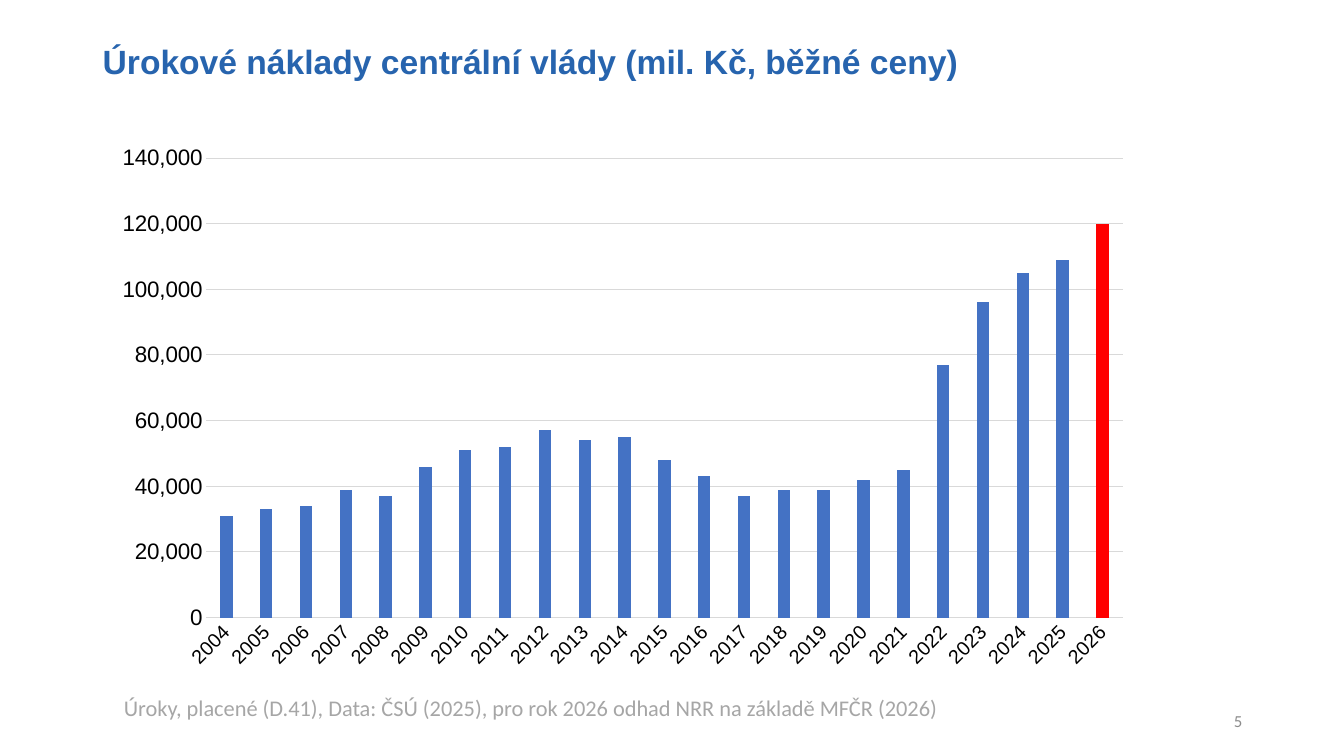
from dataclasses import dataclass

from pptx import Presentation
from pptx import util as u
from pptx.chart import data as cd
from pptx.dml import color as dc
from pptx.enum import chart as ch, text as tx

WIDE, HIGH = u.Inches(13.33), u.Inches(7.5)
HUES = {"title": "2764AE", "note": "A6A6A6", "page": "8C8C8C", "bar": "4472C4",
        "guess": "FF0000", "grid": "D9D9D9", "ink": "000000"}
YEARS = range(2004, 2027)
COSTS = [31, 33, 34, 39, 37, 46, 51, 52, 57, 54, 55, 48,
         43, 37, 39, 39, 42, 45, 77, 96, 105, 109, 120]


@dataclass
class Box:
    """A frame in percent of the slide's width and height."""
    left: float
    top: float
    wide: float
    high: float

    def frame(self) -> list[int]:
        return [round(part * side / 100) for part, side in
                zip((self.left, self.top, self.wide, self.high), (WIDE, HIGH) * 2)]


def hue(name: str) -> dc.RGBColor:
    return dc.RGBColor.from_string(HUES[name])


def style(font, size: float, tone: str, face: str, bold: bool = False) -> None:
    font.size, font.name, font.bold = u.Pt(size), face, bold
    font.color.rgb = hue(tone)


def write(slide, box: Box, words: str, *, size: float, tone: str, face: str = "Calibri",
          bold: bool = False, align=tx.PP_ALIGN.LEFT, anchor=tx.MSO_ANCHOR.TOP,
          space: float = 1.0) -> None:
    frame = slide.shapes.add_textbox(*box.frame()).text_frame
    frame.word_wrap, frame.vertical_anchor = True, anchor
    para = frame.paragraphs[0]
    para.alignment, para.line_spacing = align, space
    run = para.add_run()
    run.text = words
    style(run.font, size, tone, face, bold)


def rule(line) -> None:
    line.color.rgb, line.width = hue("grid"), u.Pt(0.75)


def plot(slide, box: Box) -> None:
    data = cd.CategoryChartData(number_format="#,##0")
    data.categories = [str(year) for year in YEARS]
    data.add_series("Series 1", [cost * 1000 for cost in COSTS])
    chart = slide.shapes.add_chart(
        ch.XL_CHART_TYPE.COLUMN_CLUSTERED, *box.frame(), data).chart
    chart.has_legend = chart.has_title = False
    style(chart.font, 10, "ink", "Calibri")

    years, costs = chart.category_axis, chart.value_axis
    for axis, size in ((years, 14), (costs, 16)):
        axis.major_tick_mark = axis.minor_tick_mark = ch.XL_TICK_MARK.NONE
        style(axis.tick_labels.font, size, "ink", "Arial")
    rule(years.format.line)
    years._element.txPr.bodyPr.set("rot", "-2700000")
    costs.format.line.fill.background()
    costs.minimum_scale, costs.maximum_scale, costs.major_unit = 0, 140000, 20000
    costs.tick_labels.number_format = "#,##0"
    costs.tick_labels.number_format_is_linked = False
    rule(costs.major_gridlines.format.line)

    bars = chart.plots[0]
    bars.gap_width, bars.overlap, bars.vary_by_categories = 219, -27, False
    row = bars.series[0]
    last = row.points[len(COSTS) - 1]
    for part, tone in ((row, "bar"), (last, "guess")):
        part.format.fill.solid()
        part.format.fill.fore_color.rgb = hue(tone)


def main() -> None:
    """Build the slide on state interest costs."""
    deck = Presentation()
    deck.slide_width, deck.slide_height = WIDE, HIGH
    slide = deck.slides.add_slide(deck.slide_layouts[6])
    write(slide, Box(70.67, 92.67, 22.51, 5.33), "5", size=12, tone="page",
          align=tx.PP_ALIGN.RIGHT, anchor=tx.MSO_ANCHOR.MIDDLE)
    plot(slide, Box(7.58, 17.87, 77.49, 72))
    write(slide, Box(6.9, 5.33, 86.27, 11.07),
          "Úrokové náklady centrální vlády (mil. Kč, běžné ceny)",
          size=24, tone="title", face="Arial", bold=True, space=0.9)
    write(slide, Box(8.48, 91.2, 80.05, 4.93),
          "Úroky, placené (D.41), Data: ČSÚ (2025), pro rok 2026 odhad NRR "
          "na základě MFČR (2026)", size=16, tone="note")
    deck.save("out.pptx")


if __name__ == "__main__":
    main()
